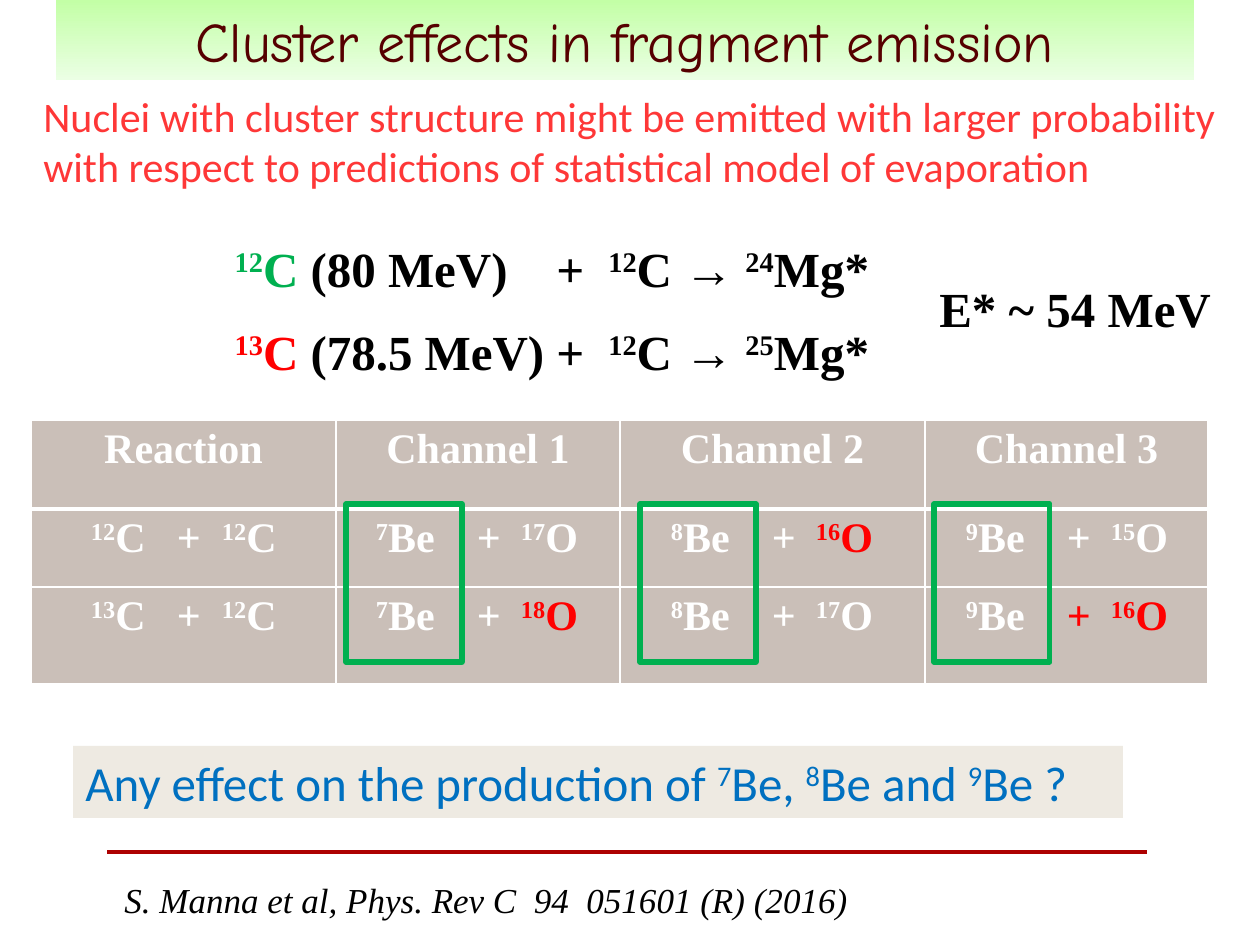
"""Build the slide on cluster effects in fragment emission."""
from lxml.etree import SubElement
from pptx import Presentation
from pptx.dml.color import RGBColor
from pptx.enum.shapes import MSO_SHAPE as Shape
from pptx.enum.text import MSO_ANCHOR as Anchor, MSO_AUTO_SIZE as AutoSize, PP_ALIGN as Align
from pptx.oxml.ns import qn
from pptx.util import Emu, Pt

COLORS = {
    "black": "000000", "white": "FFFFFF", "red": "FF0000", "green": "00B050",
    "coral": "FE3737", "blue": "0070C0", "maroon": "560000", "rule": "AD0101",
    "lime": "C3FFA6", "mint": "EBFFE4", "cell": "CABFB8", "sand": "EEEAE2",
}
FORMATS = {
    "title": {"name": "Comic Neue", "size": Pt(32)},
    "claim": {"name": "Calibri", "size": Pt(24)},
    "question": {"name": "Calibri", "size": Pt(28)},
    "equation": {"name": "Times New Roman", "size": Pt(28), "bold": True},
    "table": {"name": "Times New Roman", "size": Pt(24), "bold": True},
    "citation": {"name": "Times New Roman", "size": Pt(20), "italic": True},
}


def px(length):
    return Emu(round(length * 914400 / 126))


def rgb(name):
    return RGBColor.from_string(COLORS[name])


class SlideBuilder:
    def __init__(self, slide):
        self.slide = slide

    def add_runs(self, frame, segments, style, align=Align.LEFT, tabs=()):
        """Add (text, colour) segments; text between carets is superscript."""
        paragraph = frame.paragraphs[0]
        paragraph.alignment = align
        if tabs:
            tab_list = SubElement(paragraph._p.get_or_add_pPr(), qn("a:tabLst"))
            for position in tabs:
                SubElement(tab_list, qn("a:tab"), pos=str(px(position)), algn="l")
        for text, color in segments:
            for index, piece in enumerate(text.split("^")):
                if not piece:
                    continue
                run = paragraph.add_run()
                run.text = piece
                for attribute, value in FORMATS[style].items():
                    setattr(run.font, attribute, value)
                run.font.color.rgb = rgb(color)
                if index % 2:
                    run.font._element.set("baseline", "30000")

    def fit(self, frame):
        frame.word_wrap = True
        frame.auto_size = AutoSize.SHAPE_TO_FIT_TEXT
        frame.vertical_anchor = Anchor.TOP

    def text(self, box, segments, style, tabs=()):
        frame = self.slide.shapes.add_textbox(*map(px, box)).text_frame
        self.fit(frame)
        self.add_runs(frame, segments, style, tabs=tabs)

    def rectangle(self, box, fill=None, line=None):
        shape = self.slide.shapes.add_shape(Shape.RECTANGLE, *map(px, box))
        shape.shadow.inherit = False
        if fill:
            shape.fill.solid()
            shape.fill.fore_color.rgb = rgb(fill)
        else:
            shape.fill.background()
        if line:
            shape.line.color.rgb = rgb(line)
            shape.line.width = Pt(3)
        else:
            shape.line.fill.background()
        return shape

    def banner(self, box, segments, style, fill, align=Align.LEFT):
        shape = self.rectangle(box, fill)
        self.fit(shape.text_frame)
        self.add_runs(shape.text_frame, segments, style, align)
        return shape

    def gradient(self, shape, *colors):
        shape.fill.gradient()
        shape.fill.gradient_angle = 270
        for stop, color in zip(shape.fill.gradient_stops, colors):
            stop.color.rgb = rgb(color)

    def border(self, cell, side, width):
        line = SubElement(cell._tc.get_or_add_tcPr(), qn(f"a:ln{side}"), w=str(Pt(width)))
        fill = SubElement(line, qn("a:solidFill"))
        SubElement(fill, qn("a:srgbClr"), val=COLORS["white"])

    def table(self, box, widths, heights, headers, rows, starts, tabs):
        table = self.slide.shapes.add_table(
            len(heights), len(widths), *map(px, box)).table
        table.first_row = table.horz_banding = False
        for column, width in zip(table.columns, widths):
            column.width = px(width)
        for row, height in zip(table.rows, heights):
            row.height = px(height)
        for row_index, row in enumerate([headers, *rows]):
            for column_index, segments in enumerate(row):
                cell = table.cell(row_index, column_index)
                for side in "LRTB":
                    thick = (row_index, side) in ((0, "B"), (1, "T"))
                    self.border(cell, side, 3 if thick else 1)
                cell.fill.solid()
                cell.fill.fore_color.rgb = rgb("cell")
                if row_index == 0:
                    self.add_runs(cell.text_frame, segments, "table", Align.CENTER)
                else:
                    cell.margin_left = px(starts[column_index])
                    self.add_runs(cell.text_frame, segments, "table", tabs=tabs[column_index])


def channel(beryllium, oxygen, color="white", plus_color="white"):
    return [(f"^{beryllium}^Be\t", "white"), ("+\t", plus_color),
            (f"^{oxygen}^O", color)]


def main():
    presentation = Presentation()
    presentation.slide_width, presentation.slide_height = px(1260), px(945)
    slide = presentation.slides.add_slide(presentation.slide_layouts[6])
    builder = SlideBuilder(slide)

    for top, height in ((0, 53), (850, 4)):
        builder.rectangle((107, top, 1040, height), "rule")
    title = builder.banner((56, 0, 1138, 80),
                           [("Cluster effects in fragment emission", "maroon")],
                           "title", "lime", Align.CENTER)
    builder.gradient(title, "lime", "mint")
    builder.text((31, 84, 1207, 115),
                 [("Nuclei with cluster structure might be emitted with larger probability "
                   "with respect to predictions of statistical model of evaporation", "coral")],
                 "claim")

    reactions = ((232, 12, "green", "80", 24), (315, 13, "red", "78.5", 25))
    for top, carbon, color, energy, magnesium in reactions:
        builder.text((210, top, 788, 72),
                     [(f" ^{carbon}^C ", color),
                      (f"({energy} MeV)\t+\t^12^C → ^{magnesium}^Mg*", "black")],
                     "equation", tabs=(334, 386))

    builder.table(
        (31, 420, 1177, 264), (305, 284, 305, 283), (89, 78, 97),
        [[(name, "white")] for name in ("Reaction", "Channel 1", "Channel 2", "Channel 3")],
        [[[("^12^C\t+\t^12^C", "white")], channel(7, 17),
          channel(8, 16, "red"), channel(9, 15)],
         [[("^13^C\t+\t^12^C", "white")], channel(7, 18, "red"),
          channel(8, 17), channel(9, 16, "red", "red")]],
        starts=(60, 40, 51, 41), tabs=[(86, 131)] + [(101, 145)] * 3)

    builder.text((112, 872, 833, 55),
                 [("S. Manna et al, Phys. Rev C  94  051601 (R) (2016)", "black")], "citation")
    builder.text((927, 272, 311, 72), [("E* ~ 54 MeV", "black")], "equation")
    for index in range(3):
        builder.rectangle((346 + 294 * index, 504, 116, 158), line="green")
    builder.banner((73, 746, 1050, 72),
                   [("Any effect on the production of ^7^Be, ^8^Be and ^9^Be ?", "blue")],
                   "question", "sand")
    presentation.save("out.pptx")


if __name__ == "__main__":
    main()
